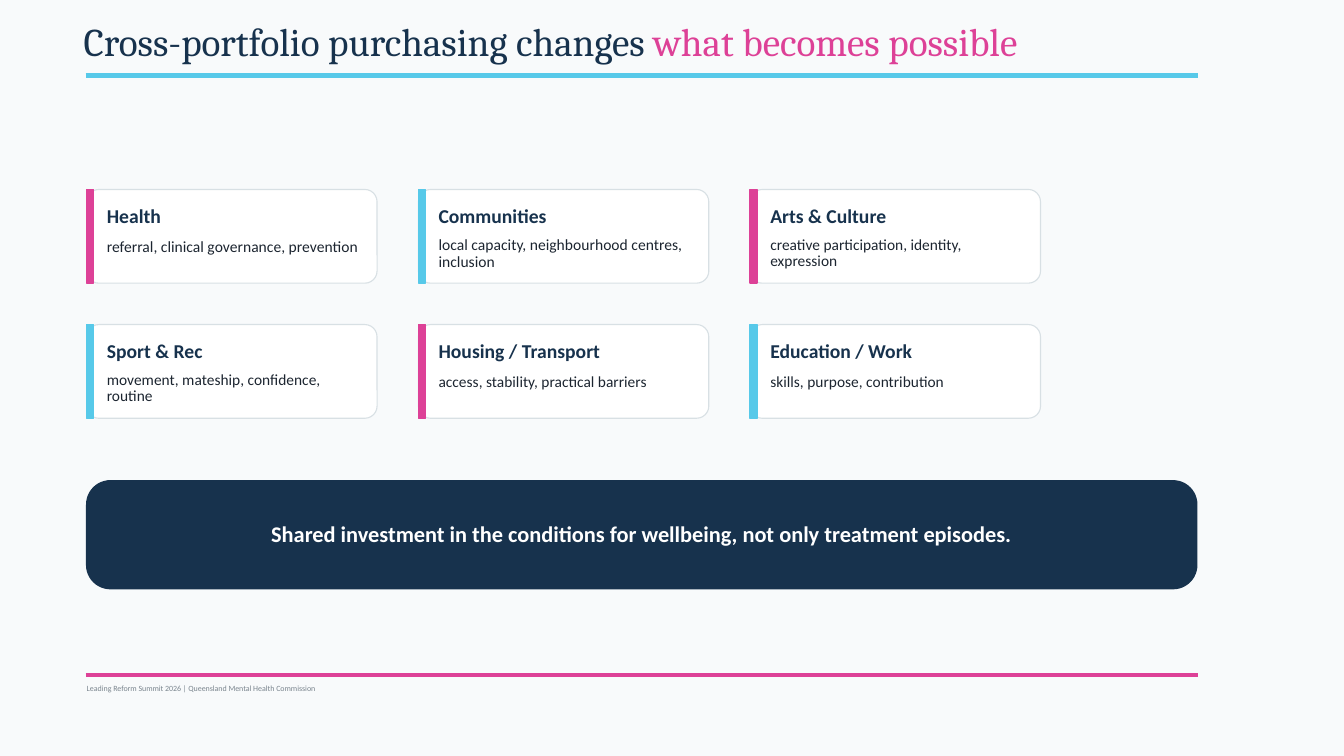
from lxml.etree import SubElement
from pptx import Presentation
from pptx.dml.color import RGBColor
from pptx.enum.shapes import MSO_CONNECTOR as Connector, MSO_SHAPE as Shape
from pptx.enum.text import MSO_ANCHOR as Anchor, MSO_AUTO_SIZE as AutoSize, PP_ALIGN as Align
from pptx.oxml.ns import qn
from pptx.util import Inches, Pt

COLOURS = {
    "page": "F8FAFB", "navy": "17324D", "pink": "DD4197", "sky": "57C9E9",
    "white": "FFFFFF", "border": "D8E0E4", "ink": "1C2530", "grey": "7A858E",
}
LEFT, RULE_LEFT, RULE_RIGHT = 0.86, 0.85, 11.88
BANNER_WIDTH = 11.01
GRID_TOP, COLUMN_STEP, ROW_STEP, COLUMNS = 1.88, 3.29, 1.34, 3
CARD_WIDTH, CARD_HEIGHT, STRIPE_WIDTH, CARD_INSET = 2.88, 0.93, 0.07, 0.2

# heading, description, description size, line spacing
CARDS = [
    ("Health", "referral, clinical governance, prevention", 11.1, 1.0),
    ("Communities", "local capacity, neighbourhood centres, inclusion", 11.1, 0.9),
    ("Arts & Culture", "creative participation, identity, expression", 11, 0.9),
    ("Sport & Rec", "movement, mateship, confidence, routine", 11, 0.9),
    ("Housing / Transport", "access, stability, practical barriers", 11, 1.0),
    ("Education / Work", "skills, purpose, contribution", 11, 1.0),
]


def colour(name):
    return RGBColor.from_string(COLOURS[name])


def set_all(target, **values):
    for name, value in values.items():
        setattr(target, name, value)


def add_span(para, text, ink, size, name="Calibri", bold=False):
    span = para.add_run()
    span.text = text
    set_all(span.font, name=name, size=Pt(size), bold=bold)
    span.font.color.rgb = colour(ink)


def add_rule(page, y, ink):
    rule = page.shapes.add_connector(
        Connector.STRAIGHT, Inches(RULE_LEFT), Inches(y), Inches(RULE_RIGHT), Inches(y))
    rule.line.color.rgb = colour(ink)
    rule.line.width = Pt(3)
    properties = rule.element.find(qn("p:spPr"))
    SubElement(properties, qn("a:effectLst"))


def add_panel(page, place, fill, border, width=1, corner=None):
    """Add a filled rectangle, rounded when a corner share is given."""
    kind = Shape.ROUNDED_RECTANGLE if corner else Shape.RECTANGLE
    panel = page.shapes.add_shape(kind, *map(Inches, place))
    if corner:
        panel.adjustments[0] = corner
    panel.shadow.inherit = False
    panel.fill.solid()
    panel.fill.fore_color.rgb = colour(fill)
    panel.line.color.rgb = colour(border)
    panel.line.width = Pt(width)


def add_label(page, place, text, ink, size, bold=False,
              anchor=Anchor.MIDDLE, align=Align.LEFT, spacing=1.0):
    box = page.shapes.add_textbox(*map(Inches, place))
    frame = box.text_frame
    set_all(frame, word_wrap=True, vertical_anchor=anchor,
            margin_left=0, margin_top=0, margin_right=0, margin_bottom=0)
    para = frame.paragraphs[0]
    set_all(para, alignment=align, line_spacing=spacing)
    add_span(para, text, ink, size, bold=bold)


def add_title(page):
    title = page.shapes.title
    set_all(title, left=Inches(0.73), top=Inches(0.17),
            width=Inches(10.64), height=Inches(0.53))
    frame = title.text_frame
    set_all(frame, word_wrap=True, auto_size=AutoSize.NONE, vertical_anchor=Anchor.MIDDLE)
    para = frame.paragraphs[0]
    set_all(para, alignment=Align.LEFT, line_spacing=0.9)
    add_span(para, "Cross-portfolio purchasing changes ", "navy", 28, "Cambria")
    add_span(para, "what becomes possible", "pink", 28, "Cambria")


def add_card(page, index, heading, description, size, spacing):
    row, column = divmod(index, COLUMNS)
    left = LEFT + column * COLUMN_STEP
    top = GRID_TOP + row * ROW_STEP
    accent = ("pink", "sky")[index % 2]
    text_left = left + CARD_INSET
    add_panel(page, (left, top, CARD_WIDTH, CARD_HEIGHT), "white", "border", 0.8, 0.13)
    add_panel(page, (left, top, STRIPE_WIDTH, CARD_HEIGHT), accent, accent)
    add_label(page, (text_left, top + 0.13, 2.56, 0.26), heading, "navy", 14, bold=True)
    add_label(page, (text_left, top + 0.47, 2.52, 0.35), description, "ink", size,
              anchor=Anchor.TOP, spacing=spacing)


def main():
    deck = Presentation()
    set_all(deck, slide_width=Inches(13.33), slide_height=Inches(7.5))
    page = deck.slides.add_slide(deck.slide_layouts.get_by_name("Title Only"))
    page.background.fill.solid()
    page.background.fill.fore_color.rgb = colour("page")

    add_title(page)
    add_rule(page, 0.75, "sky")
    add_rule(page, 6.7, "pink")
    for index, card in enumerate(CARDS):
        add_card(page, index, *card)
    add_panel(page, (LEFT, 4.77, BANNER_WIDTH, 1.07), "navy", "navy", corner=0.22)
    add_label(page, (LEFT, 4.87, BANNER_WIDTH, 0.85),
              "Shared investment in the conditions for wellbeing, not only treatment episodes.",
              "white", 16, bold=True, align=Align.CENTER)
    add_label(page, (LEFT, 6.75, 6.5, 0.16),
              "Leading Reform Summit 2026 | Queensland Mental Health Commission", "grey", 5.7)
    deck.save("out.pptx")


if __name__ == "__main__":
    main()
